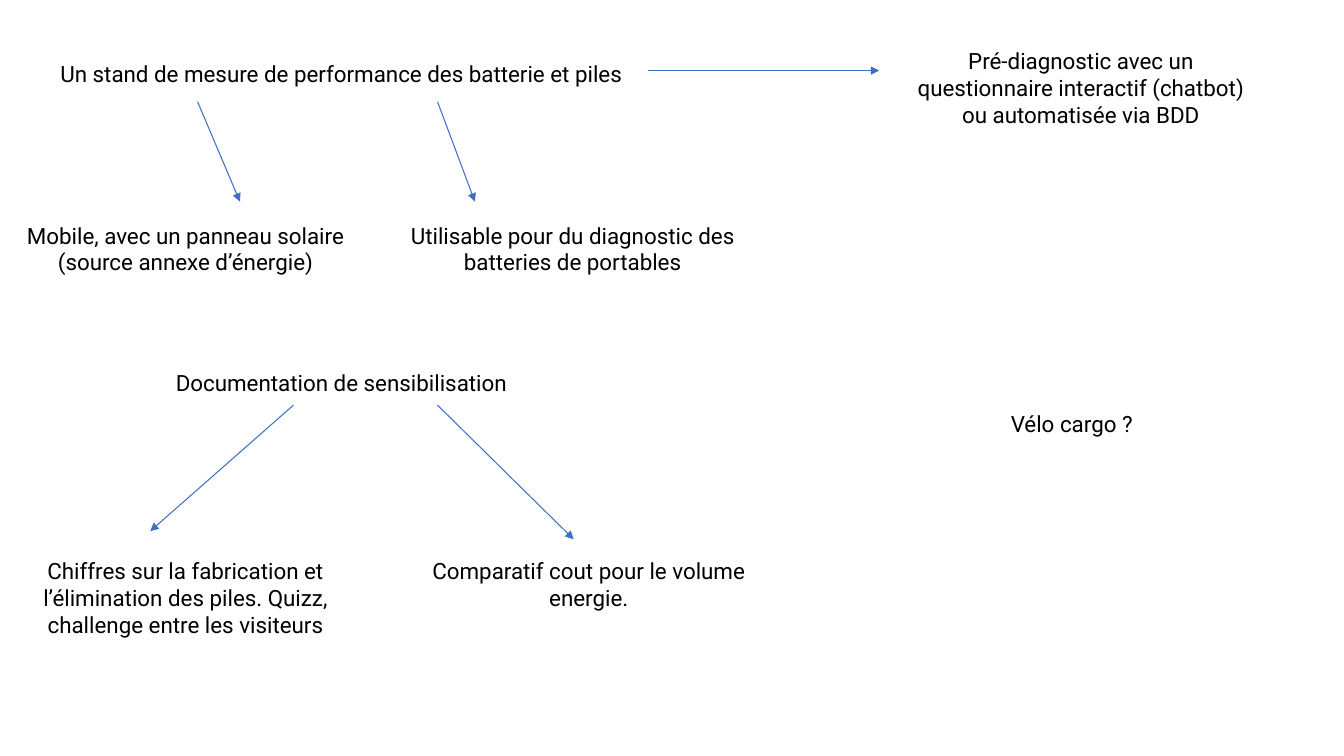
"""Builds a one-slide idea map about a battery measurement stand."""
from lxml import etree
from pptx import Presentation
from pptx import util as u
from pptx.dml.color import RGBColor
from pptx.enum import shapes, text
from pptx.oxml.ns import qn

FONT = "Roboto"
TEXT_COLOR = "000000"
ARROW_COLOR = "3F6FC3"
TOPIC_WIDTH, IDEA_WIDTH = 6.09, 3.46
HEIGHT_BY_LINES = {1: 0.61, 2: 0.88, 3: 1.14}

# left, top, width, line count, wording
LABELS = [
    (0.34, 0.55, TOPIC_WIDTH, 1, "Un stand de mesure de performance des batterie et piles"),
    (0.11, 2.15, IDEA_WIDTH, 2, "Mobile, avec un panneau solaire (source annexe d’énergie)"),
    (3.95, 2.15, IDEA_WIDTH, 2, "Utilisable pour du diagnostic des batteries de portables"),
    (8.99, 0.42, IDEA_WIDTH, 3,
     "Pré-diagnostic avec un questionnaire interactif (chatbot) ou automatisée via BDD"),
    (0.34, 3.61, TOPIC_WIDTH, 1, "Documentation de sensibilisation"),
    (0.11, 5.48, IDEA_WIDTH, 3,
     "Chiffres sur la fabrication et l’élimination des piles. Quizz, challenge entre les visiteurs"),
    (4.11, 5.48, IDEA_WIDTH, 2, "Comparatif cout pour le volume energie."),
    (8.9, 4.02, IDEA_WIDTH, 1, "Vélo cargo ?"),
]

ARROWS = [
    ((1.96, 1.01), (2.38, 2)),
    ((4.34, 1.01), (4.71, 2)),
    ((6.43, 0.7), (8.72, 0.7)),
    ((2.91, 4.02), (1.49, 5.27)),
    ((4.34, 4.02), (5.69, 5.35)),
]


def set_color(color_format, value):
    color_format.rgb = RGBColor.from_string(value)


def add_label(slide, left, top, width, lines, wording):
    box = slide.shapes.add_textbox(
        *map(u.Inches, (left, top, width, HEIGHT_BY_LINES[lines])))
    frame = box.text_frame
    frame.word_wrap = True
    frame.auto_size = text.MSO_AUTO_SIZE.SHAPE_TO_FIT_TEXT
    paragraph = frame.paragraphs[0]
    paragraph.text = wording
    paragraph.alignment = text.PP_ALIGN.CENTER
    paragraph.font.name = FONT
    paragraph.font.size = u.Pt(16)
    set_color(paragraph.font.color, TEXT_COLOR)


def add_arrow(slide, start, end):
    arrow = slide.shapes.add_connector(
        shapes.MSO_CONNECTOR.STRAIGHT, *map(u.Inches, start + end))
    arrow.line.width = u.Pt(0.75)
    set_color(arrow.line.color, ARROW_COLOR)
    etree.SubElement(arrow.line._get_or_add_ln(), qn("a:tailEnd"), type="triangle")
    etree.SubElement(arrow._element.spPr, qn("a:effectLst"))


def main():
    presentation = Presentation()
    presentation.slide_width = u.Inches(13.33)
    presentation.slide_height = u.Inches(7.5)
    slide = presentation.slides.add_slide(presentation.slide_layouts[6])
    for label in LABELS:
        add_label(slide, *label)
    for start, end in ARROWS:
        add_arrow(slide, start, end)
    presentation.save("out.pptx")


if __name__ == "__main__":
    main()
